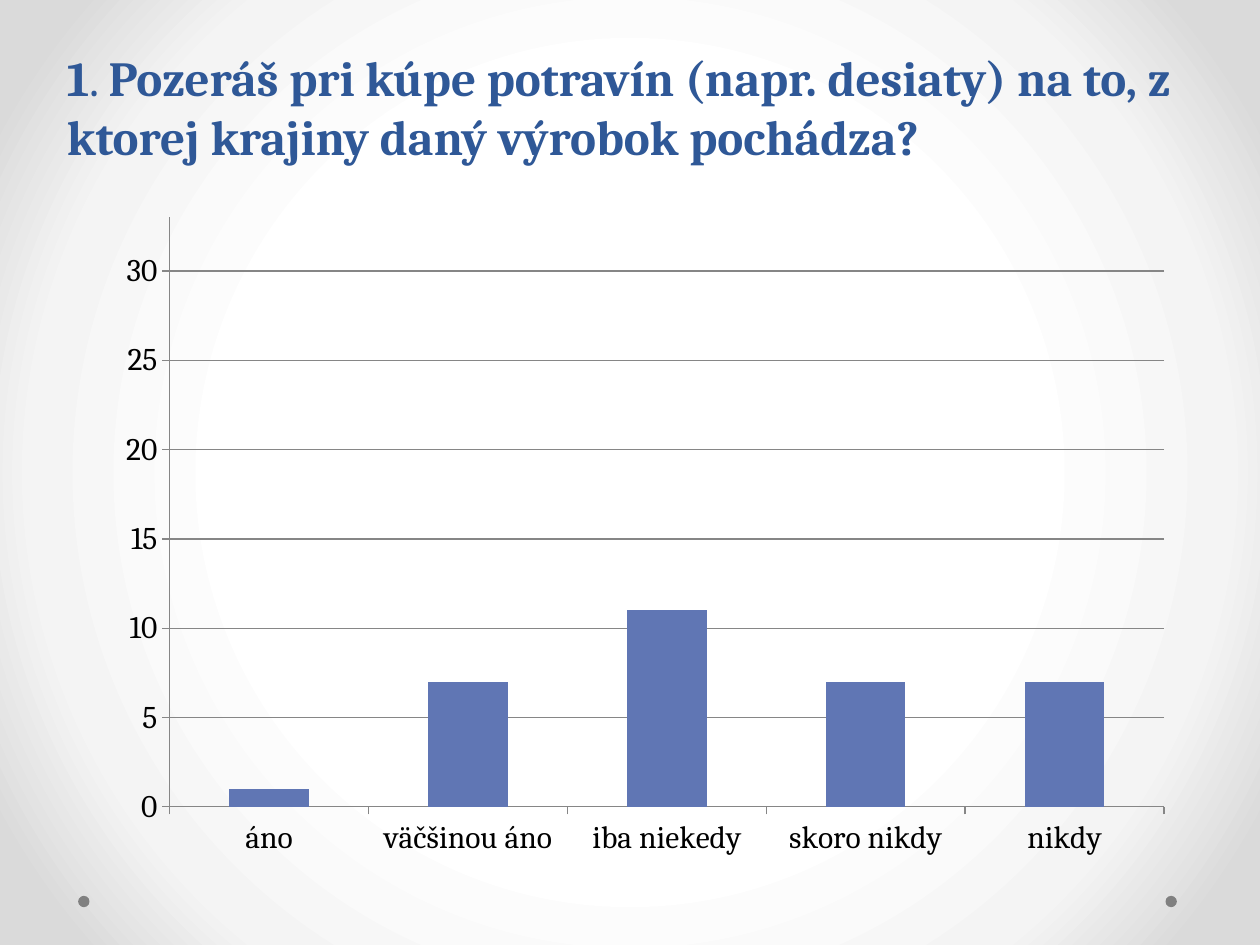
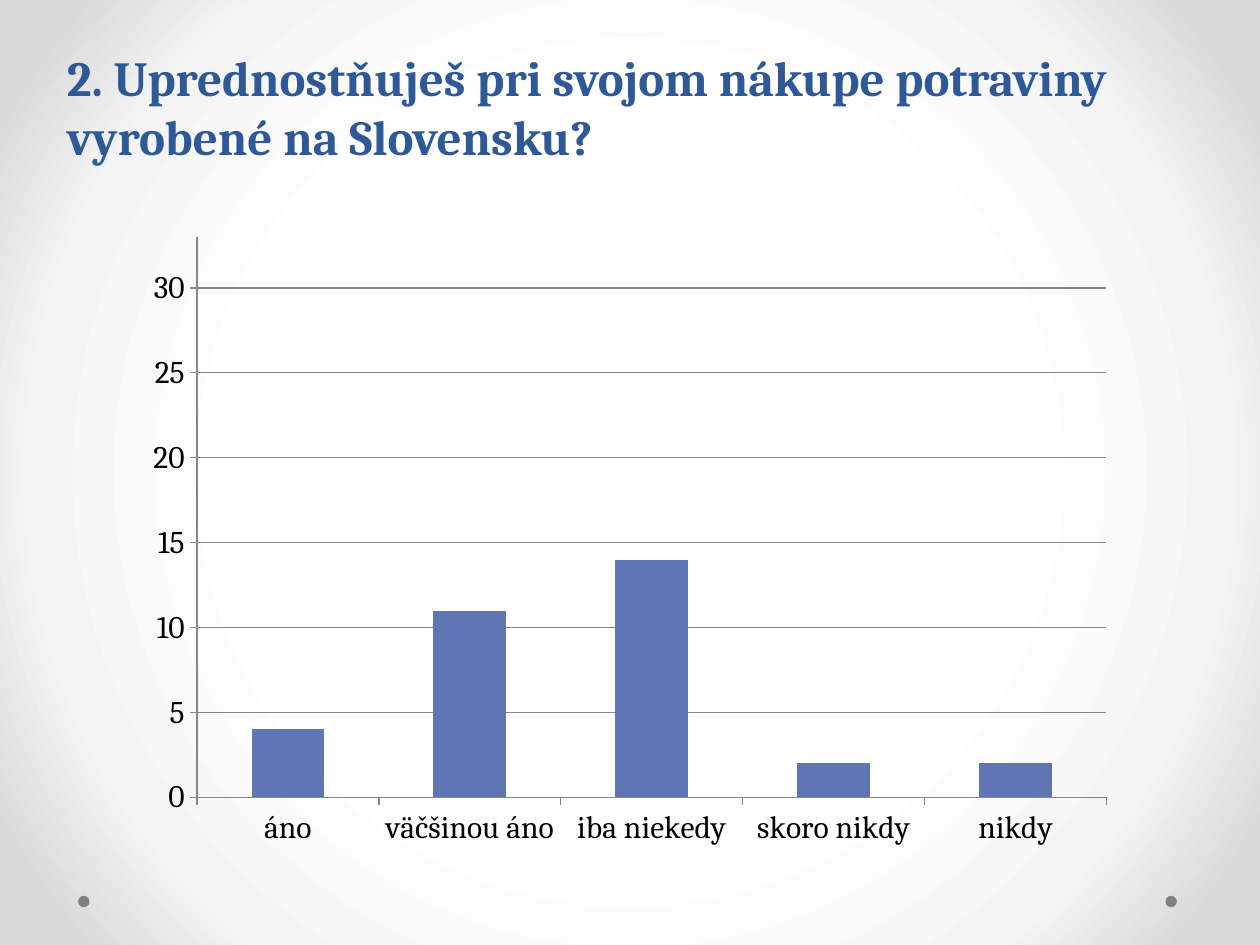
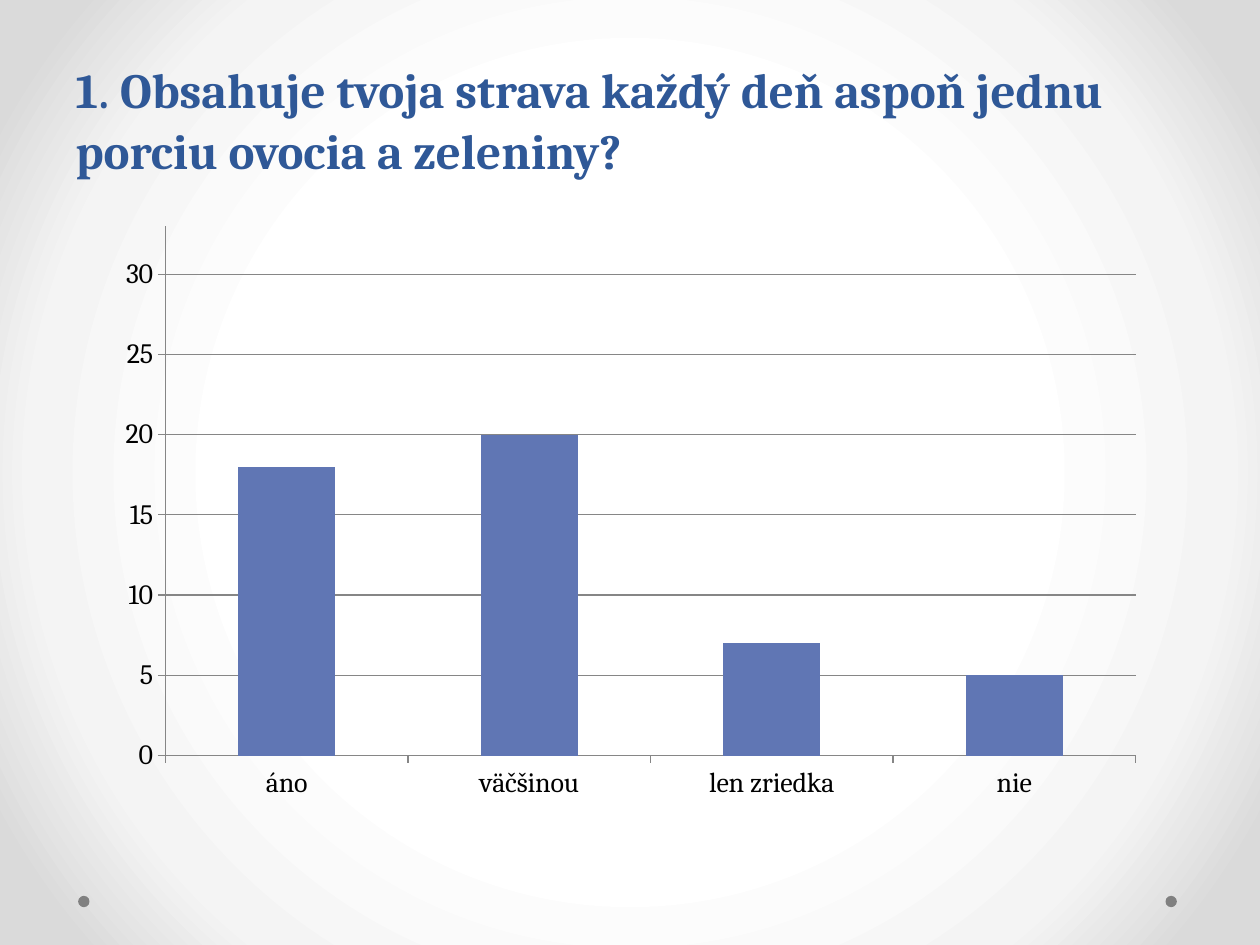
import pptx
import pptx.chart.data
import pptx.dml.color
import pptx.enum.chart
import pptx.enum.shapes
import pptx.enum.text
import pptx.oxml
import pptx.oxml.ns
import pptx.util

COLORS = {
    "title": "2F5897",
    "bar": "6076B4",
    "text": "000000",
    "axis": "868686",
    "dot": "808080",
}
BACKGROUND_STOPS = [(50, "FFFFFF"), (76, "F4F4F4"), (92, "DADADA")]
FONT = "Cambria"
FREQUENCIES = ["áno", "väčšinou áno", "iba niekedy", "skoro nikdy", "nikdy"]

SLIDES = [
    {
        "title": [
            ("1", 28, True),
            (". ", 28, False),
            ("Pozeráš pri kúpe potravín (napr. desiaty) na to, z ktorej krajiny daný výrobok pochádza?", 28, True),
        ],
        "title_box": (0.43, 0.21, 9, 1.15),
        "chart_box": (0.83, 1.62, 8.58, 5.28),
        "size": 18,
        "answers": FREQUENCIES,
        "counts": [1, 7, 11, 7, 7],
    },
    {
        "title": [("2. Uprednostňuješ pri svojom nákupe potraviny vyrobené na Slovensku?", 28, True)],
        "title_box": (0.43, 0.21, 9, 1.15),
        "chart_box": (1.06, 1.78, 7.88, 5.04),
        "size": 18,
        "answers": FREQUENCIES,
        "counts": [4, 11, 14, 2, 2],
    },
    {
        "title": [
            ("1", 28, True),
            (". ", 32, False),
            ("Obsahuje tvoja strava každý deň aspoň jednu porciu ovocia a zeleniny?", 28, True),
        ],
        "title_box": (0.5, 0, 9, 1.47),
        "chart_box": (0.83, 1.7, 8.35, 4.74),
        "size": 16,
        "answers": ["áno", "väčšinou", "len zriedka", "nie"],
        "counts": [18, 20, 7, 5],
    },
]


def rgb(name):
    return pptx.dml.color.RGBColor.from_string(COLORS[name])


def inches(box):
    return [pptx.util.Inches(v) for v in box]


prs = pptx.Presentation()
prs.slide_width, prs.slide_height = inches((10, 7.5))
master = prs.slide_master
layout = prs.slide_layouts.get_by_name("Title Only")

master.background.fill.solid()
bg = master.element.find(".//" + pptx.oxml.ns.qn("p:bgPr"))
stops = "".join(
    f'<a:gs pos="{pos * 1000}"><a:srgbClr val="{color}"/></a:gs>' for pos, color in BACKGROUND_STOPS
)
gradient = pptx.oxml.parse_xml(
    f'<a:gradFill {pptx.oxml.ns.nsdecls("a")} rotWithShape="1"><a:gsLst>{stops}</a:gsLst>'
    '<a:path path="circle"><a:fillToRect l="50000" t="50000" r="50000" b="50000"/></a:path></a:gradFill>'
)
bg.replace(bg[0], gradient)

for number, content in enumerate(SLIDES):
    s = prs.slides.add_slide(layout)

    if number == 0:
        for i, left in enumerate((9.25, 0.62)):
            dot = s.shapes.add_shape(
                pptx.enum.shapes.MSO_SHAPE.OVAL, *inches((left, 7.11, 0.09, 0.09))
            )
            dot.shadow.inherit = False
            dot.fill.solid()
            dot.fill.fore_color.rgb = rgb("dot")
            dot.line.fill.background()
            dot.element.nvSpPr.cNvPr.set("id", str(20 + i))
            master.shapes.element.append(dot.element)

    title = s.shapes.title
    title.left, title.top, title.width, title.height = inches(content["title_box"])
    tf = title.text_frame
    tf.word_wrap = True
    tf.auto_size = pptx.enum.text.MSO_AUTO_SIZE.NONE
    tf.vertical_anchor = pptx.enum.text.MSO_ANCHOR.BOTTOM
    p = tf.paragraphs[0]
    p.alignment = pptx.enum.text.PP_ALIGN.LEFT
    for text, size, bold in content["title"]:
        r = p.add_run()
        r.text = text
        r.font.name = FONT
        r.font.size = pptx.util.Pt(size)
        r.font.bold = bold
        r.font.color.rgb = rgb("title")

    data = pptx.chart.data.CategoryChartData()
    data.categories = content["answers"]
    data.add_series("Series 1", content["counts"])
    chart = s.shapes.add_chart(
        pptx.enum.chart.XL_CHART_TYPE.COLUMN_CLUSTERED, *inches(content["chart_box"]), data
    ).chart
    chart.has_title = False
    chart.has_legend = False
    chart.font.name = FONT
    chart.font.size = pptx.util.Pt(content["size"])
    chart.font.color.rgb = rgb("text")

    plot = chart.plots[0]
    plot.gap_width = 150
    plot.vary_by_categories = False
    bars = plot.series[0].format.fill
    bars.solid()
    bars.fore_color.rgb = rgb("bar")

    values = chart.value_axis
    values.minimum_scale = 0
    values.maximum_scale = 33
    values.major_unit = 5
    values.has_major_gridlines = True
    for axis in (chart.category_axis, values):
        axis.major_tick_mark = pptx.enum.chart.XL_TICK_MARK.OUTSIDE
        axis.minor_tick_mark = pptx.enum.chart.XL_TICK_MARK.NONE
    for lines in (chart.category_axis, values, values.major_gridlines):
        lines.format.line.color.rgb = rgb("axis")
        lines.format.line.width = pptx.util.Pt(0.75)

prs.save("out.pptx")
